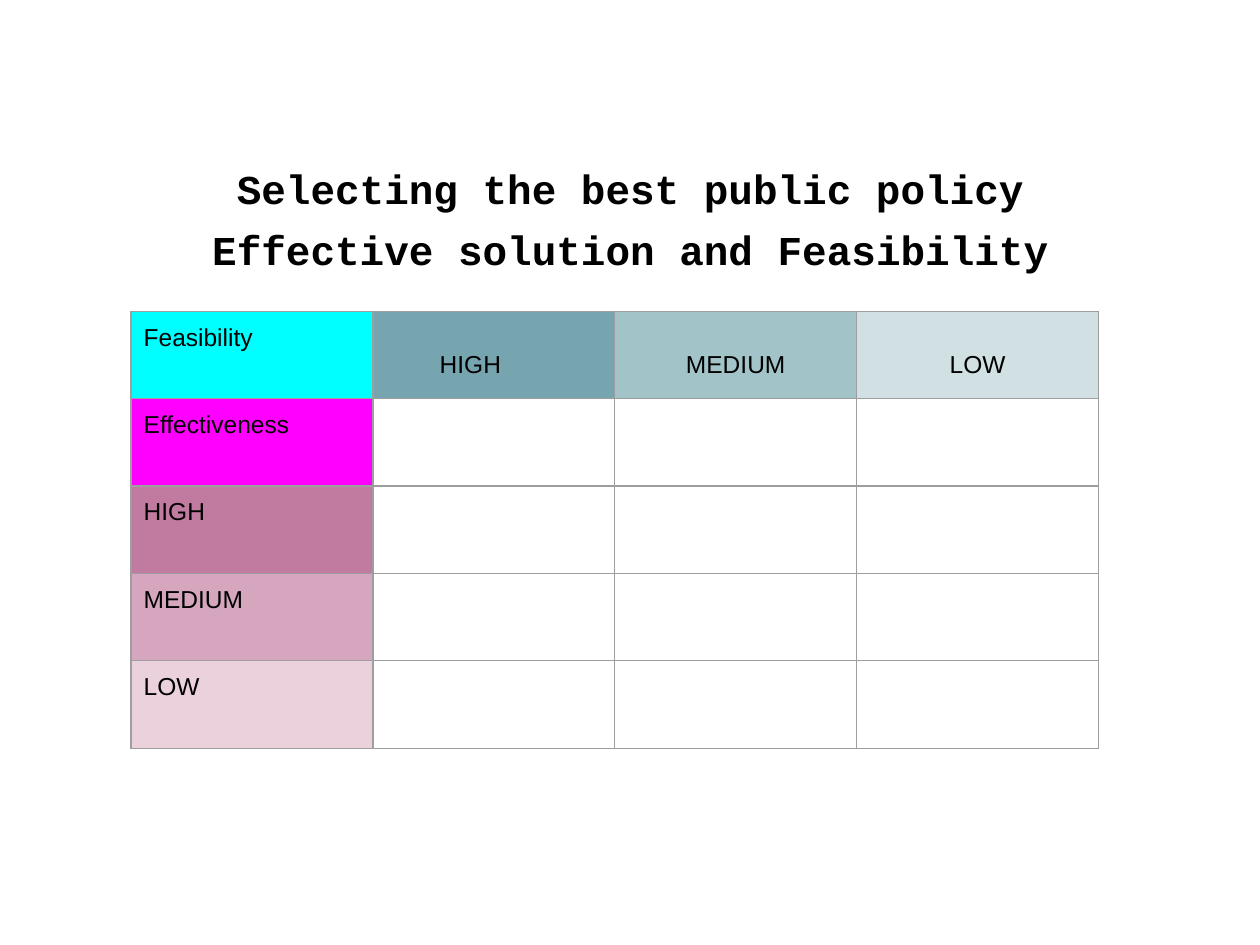
from lxml import etree
from pptx import Presentation
from pptx.dml.color import RGBColor
from pptx.enum.text import MSO_ANCHOR, PP_ALIGN
from pptx.oxml.ns import qn
from pptx.util import Inches, Pt

CENTER, LEFT = PP_ALIGN.CENTER, PP_ALIGN.LEFT
BOTTOM = MSO_ANCHOR.BOTTOM
BLACK = RGBColor(0x00, 0x00, 0x00)
GRAY = RGBColor(0x9E, 0x9E, 0x9E)
CYAN = RGBColor(0x00, 0xFF, 0xFF)
MAGENTA = RGBColor(0xFF, 0x00, 0xFF)
TEALS = [RGBColor(0x76, 0xA5, 0xAF), RGBColor(0xA2, 0xC4, 0xC9), RGBColor(0xD0, 0xE0, 0xE3)]
PINKS = [RGBColor(0xC2, 0x7B, 0xA0), RGBColor(0xD5, 0xA6, 0xBD), RGBColor(0xEA, 0xD1, 0xDC)]

LEVELS = ["HIGH", "MEDIUM", "LOW"]
ROWS, COLUMNS = 5, 4
PADDING = 0.1
LINE_DROP = 0.22
HIGH_INDENT = 0.43


def style_font(font, name, size, bold=False):
    """Give a font its name, size, weight and black colour."""
    font.name, font.size, font.bold = name, Pt(size), bold
    font.color.rgb = BLACK


def add_title(page, left, top, width, height):
    """Place the centred title at the bottom of its box."""
    frame = page.shapes.add_textbox(*map(Inches, (left, top, width, height))).text_frame
    frame.word_wrap = True
    frame.vertical_anchor = BOTTOM
    frame.margin_bottom = 0
    frame.text = "Selecting the best public policy Effective solution and Feasibility"
    para = frame.paragraphs[0]
    para.alignment = CENTER
    para.line_spacing = 1.23
    style_font(para.runs[0].font, "Courier New", 23.4, bold=True)


def add_borders(cell):
    """Draw a thin gray line on all four sides of a cell."""
    properties = cell._tc.get_or_add_tcPr()
    for side in ("a:lnL", "a:lnR", "a:lnT", "a:lnB"):
        line = etree.SubElement(properties, qn(side), w=str(Pt(0.75)))
        fill = etree.SubElement(line, qn("a:solidFill"))
        etree.SubElement(fill, qn("a:srgbClr"), val=str(GRAY))


def fill_label(cell, text, color, alignment=LEFT, drop=0, indent=0):
    """Write a label into a coloured cell, shifted down or right if asked."""
    cell.fill.solid()
    cell.fill.fore_color.rgb = color
    cell.margin_left = Inches(PADDING + indent)
    cell.margin_top = Inches(PADDING + drop)
    cell.margin_right = cell.margin_bottom = Inches(PADDING)
    cell.text_frame.text = text
    para = cell.text_frame.paragraphs[0]
    para.alignment = alignment
    style_font(para.runs[0].font, "Arial", 14)


def add_matrix(page, left, top, width, height):
    """Place the feasibility and effectiveness matrix in its box."""
    box = page.shapes.add_table(ROWS, COLUMNS, *map(Inches, (left, top, width, height)))
    table = box.table
    table.first_row = table.horz_banding = False
    for cell in table.iter_cells():
        add_borders(cell)
        cell.fill.background()
    fill_label(table.cell(0, 0), "Feasibility", CYAN)
    fill_label(table.cell(1, 0), "Effectiveness", MAGENTA)
    for index, (level, teal, pink) in enumerate(zip(LEVELS, TEALS, PINKS)):
        alignment, indent = (CENTER, 0) if index else (LEFT, HIGH_INDENT)
        fill_label(table.cell(0, index + 1), level, teal, alignment, LINE_DROP, indent)
        fill_label(table.cell(index + 2, 0), level, pink)


def main():
    """Build the slide and save the deck."""
    deck = Presentation()
    deck.slide_width, deck.slide_height = Inches(10), Inches(7.5)
    page = deck.slides.add_slide(deck.slide_layouts[6])
    add_title(page, 1.5, 1.42, 7, 0.75)
    add_matrix(page, 1.04, 2.47, 7.68, 3.47)
    deck.save("out.pptx")


if __name__ == "__main__":
    main()
